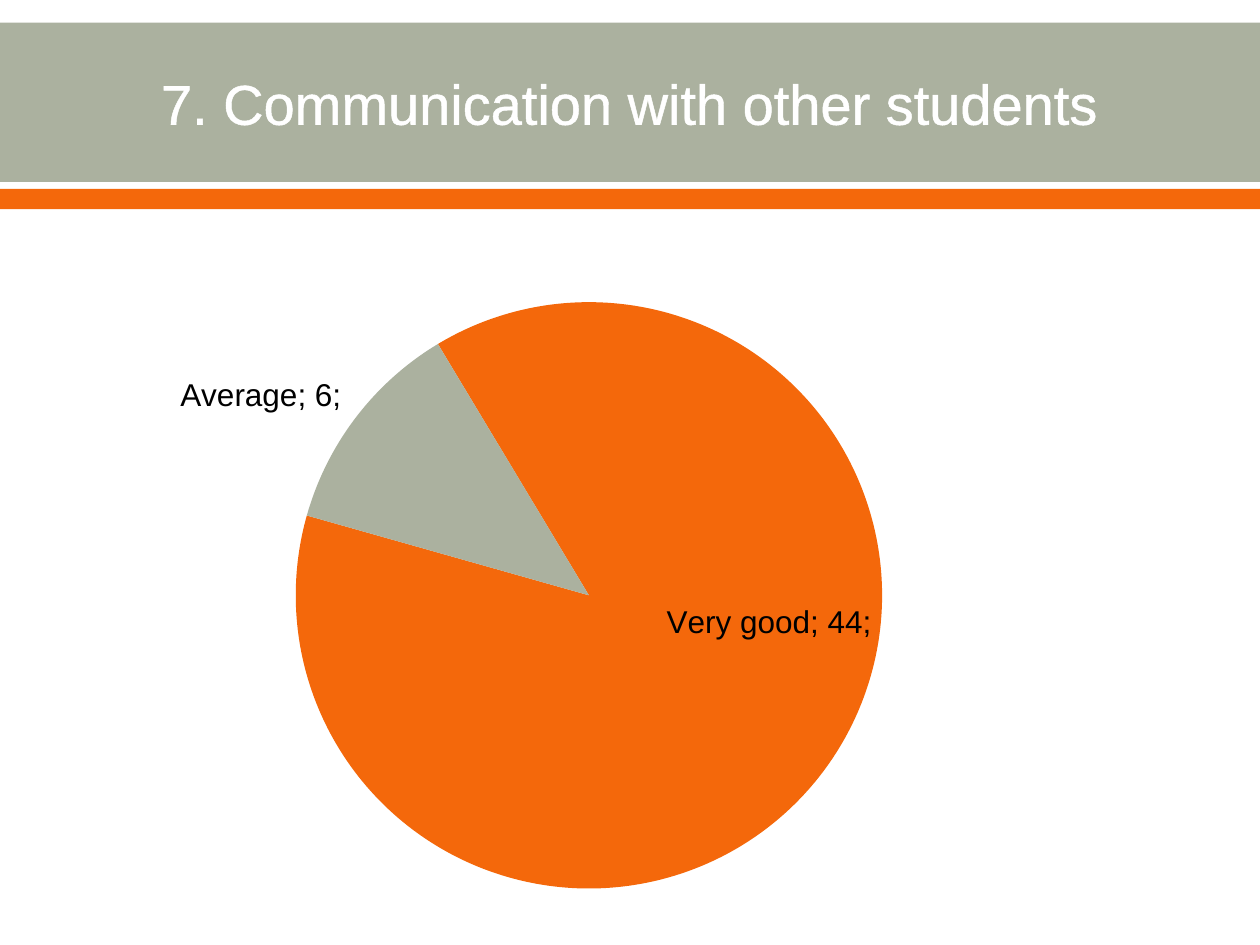
from dataclasses import dataclass

from lxml.etree import SubElement
from pptx import Presentation
from pptx.chart.data import CategoryChartData
from pptx.dml.color import RGBColor
from pptx.enum.chart import XL_CHART_TYPE, XL_LABEL_POSITION
from pptx.enum.shapes import MSO_SHAPE
from pptx.enum.text import MSO_ANCHOR, PP_ALIGN
from pptx.oxml.ns import qn
from pptx.util import Pt


@dataclass(frozen=True)
class Theme:
    """Colours, typeface and type sizes of the slide."""
    sage: RGBColor = RGBColor(0xAB, 0xB1, 0x9F)
    orange: RGBColor = RGBColor(0xF4, 0x68, 0x0B)
    white: RGBColor = RGBColor(0xFF, 0xFF, 0xFF)
    black: RGBColor = RGBColor(0, 0, 0)
    font: str = "Arial"
    title_size: Pt = Pt(32)
    title_outline: Pt = Pt(1.1)
    label_size: Pt = Pt(18)


THEME = Theme()


def style_font(font, size, color, bold=False):
    """Apply the theme typeface with a size, colour and weight."""
    font.name = THEME.font
    font.size = size
    font.bold = bold
    font.color.rgb = color


def outline_text(run, color, width):
    """Draw a thin solid outline around the letters of a run."""
    properties = run._r.get_or_add_rPr()
    line = SubElement(properties, qn("a:ln"))
    line.set("w", str(int(width)))
    fill = SubElement(line, qn("a:solidFill"))
    SubElement(fill, qn("a:srgbClr")).set("val", str(color))
    properties.insert(0, line)


def add_band(slide, box, color):
    """Draw a plain filled band in the box."""
    band = slide.shapes.add_shape(MSO_SHAPE.RECTANGLE, *box)
    band.shadow.inherit = False
    band.fill.solid()
    band.fill.fore_color.rgb = color
    band.line.fill.background()


def add_header(slide, box, text):
    """Place the sage band, the orange stripe and the title in the box."""
    left, top, width, height = box
    stripe_height, gap, margin = Pt(11.5), Pt(4), Pt(36)
    band_height = height - stripe_height - gap
    add_band(slide, (left, top, width, band_height), THEME.sage)
    add_band(slide, (left, top + height - stripe_height, width, stripe_height), THEME.orange)
    title = slide.shapes.title
    title.left, title.top = left + margin, top + Pt(1.5)
    title.width, title.height = width - 2 * margin, band_height - Pt(3)
    frame = title.text_frame
    frame.word_wrap = True
    frame.vertical_anchor = MSO_ANCHOR.MIDDLE
    paragraph = frame.paragraphs[0]
    paragraph.alignment = PP_ALIGN.CENTER
    run = paragraph.add_run()
    run.text = text
    style_font(run.font, THEME.title_size, THEME.white)
    outline_text(run, THEME.white, THEME.title_outline)
    slide.shapes._spTree.append(title._element)


def set_layout(layout, **values):
    """Write a manual chart layout from the named values."""
    manual = SubElement(layout, qn("c:manualLayout"))
    for name, value in values.items():
        SubElement(manual, qn(f"c:{name}")).set("val", str(value))


def label_point(point, text, position, offset):
    """Give a slice its own label, shifted by a share of the chart size."""
    label = point.data_label
    run = label.text_frame.paragraphs[0].add_run()
    run.text = text
    style_font(run.font, THEME.label_size, THEME.black)
    label.position = position
    element = label._dLbl
    for name in ("showVal", "showCatName", "showPercent"):
        element.find(qn(f"c:{name}")).set("val", "1")
    if offset:
        layout = SubElement(element, qn("c:layout"))
        element.insert(1, layout)
        set_layout(layout, x=offset[0], y=offset[1])


def add_pie(slide, box, slices):
    """Draw the pie chart with its labelled slices in the box."""
    data = CategoryChartData()
    data.categories = [name for name, *_ in slices]
    data.add_series("Series 1", [value for _, value, *_ in slices])
    chart = slide.shapes.add_chart(XL_CHART_TYPE.PIE, *box, data).chart
    chart.has_legend = False
    chart.has_title = False
    style_font(chart.font, THEME.label_size, THEME.black)
    plot = chart.plots[0]
    plot.vary_by_categories = True
    series = plot.series[0]
    labels = series.data_labels
    labels.show_value = labels.show_percentage = labels.show_category_name = True
    style_font(labels.font, THEME.label_size, THEME.black, bold=True)
    for index, (name, value, color, position, offset) in enumerate(slices):
        point = series.points[index]
        point.format.fill.solid()
        point.format.fill.fore_color.rgb = color
        point.format.line.fill.background()
        label_point(point, f"{name}; {value}; ", position, offset)
    plot_area = chart._chartSpace.chart.plotArea
    pie = plot_area.find(qn("c:pieChart"))
    angle = pie.find(qn("c:firstSliceAng"))
    if angle is None:
        angle = SubElement(pie, qn("c:firstSliceAng"))
    angle.set("val", "329")
    layout = plot_area.find(qn("c:layout"))
    if layout is None:
        layout = SubElement(plot_area, qn("c:layout"))
        plot_area.insert(0, layout)
    set_layout(layout, layoutTarget="inner", xMode="edge", yMode="edge",
               x=0.22, y=0.03, w=0.52, h=0.94)


def main():
    """Build and save the slide."""
    presentation = Presentation()
    presentation.slide_width, presentation.slide_height = Pt(720), Pt(540)
    slide = presentation.slides.add_slide(presentation.slide_layouts[5])
    add_header(slide, (Pt(0), Pt(13), Pt(720), Pt(106.5)), "7. Communication with other students")
    add_pie(slide, (Pt(25.5), Pt(162), Pt(648), Pt(356.5)), [
        ("Very good", 44, THEME.orange, XL_LABEL_POSITION.CENTER, (0.06, -0.1)),
        ("Average", 6, THEME.sage, XL_LABEL_POSITION.OUTSIDE_END, None),
    ])
    presentation.save("out.pptx")


if __name__ == "__main__":
    main()
